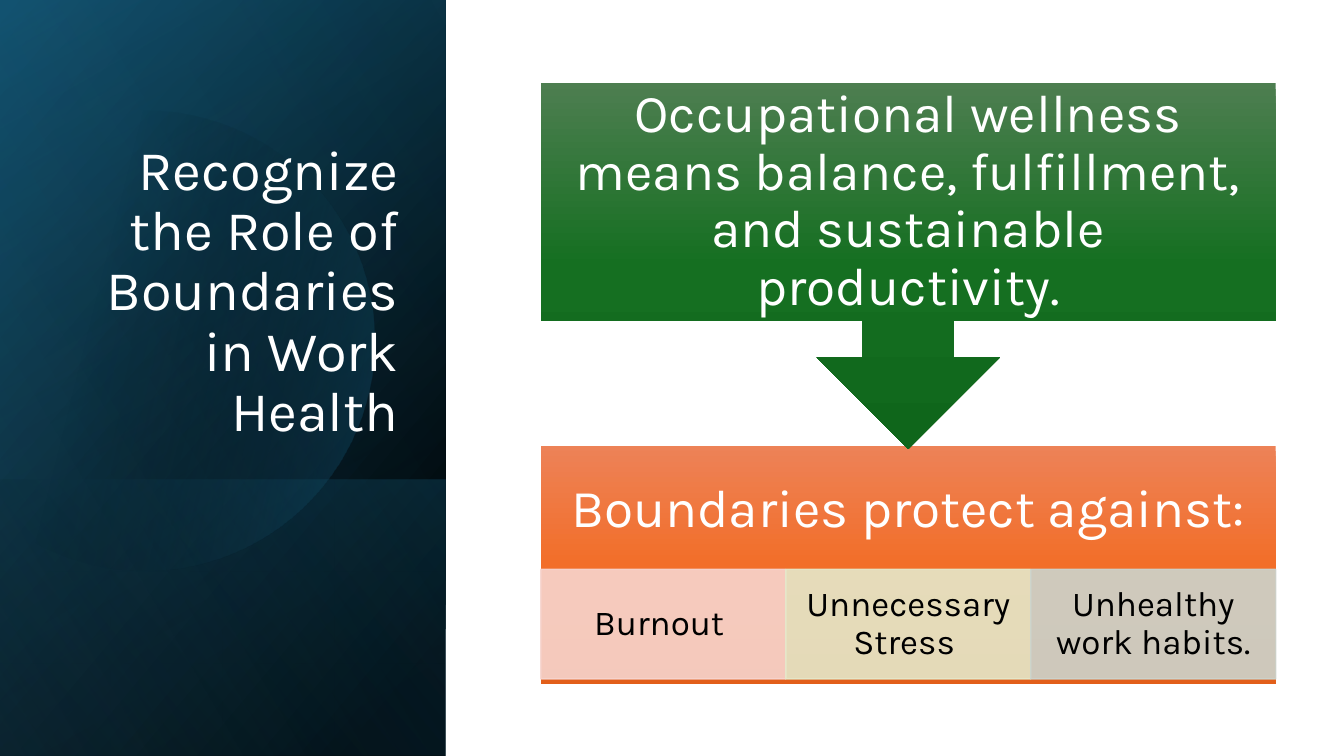
"""Build a slide on the role of boundaries in work health."""
from dataclasses import dataclass
from math import acos, cos, sin
from lxml.etree import SubElement as Sub
from pptx import Presentation as Deck
from pptx.dml.color import RGBColor as Rgb
from pptx.enum.shapes import MSO_SHAPE as Kind
from pptx.enum.text import MSO_ANCHOR as Anchor, PP_ALIGN as Align
from pptx.oxml.ns import qn
from pptx.shapes.autoshape import Shape
from pptx.util import Cm, Pt

INK = {
    "black": "000000", "white": "FFFFFF", "navy": "104862", "teal": "156082",
    "sky": "46B1E1", "moss": "4D7E50", "green": "156F21", "pine": "0F661B",
    "peach": "ED8257", "orange": "F26E29", "rust": "E25F1A",
    "pink": "F7D5CE", "lime": "E5E8CA", "sage": "CCD4CD",
}
SIDE, HIGH = 11.23, 19.05
LEFT, WIDE = 13.63, 18.52
HEAD = 3.25


@dataclass
class Stop:
    at: int
    ink: str
    alpha: int = 100


@dataclass
class Glow:
    angle: int
    stops: list[Stop]


@dataclass
class Box:
    left: float
    top: float
    width: float
    height: float


@dataclass
class Cell:
    text: str
    ink: str


SHEET = Box(0, 0, SIDE, HIGH)
BASE = (SHEET, Glow(220, [Stop(8, "black"), Stop(100, "navy")]))
HAZE = (SHEET, Glow(240, [Stop(0, "black", 0), Stop(99, "teal", 46)]))
FOOT = (Box(0, 12.09, SIDE, 6.96),
        Glow(140, [Stop(2, "teal", 29), Stop(100, "black", 30)]))
SHEEN = (SHEET, Glow(150, [Stop(0, "black", 0), Stop(99, "sky", 11)]))
DISC = Glow(14, [Stop(29, "black", 0), Stop(100, "teal", 43)])
GREEN = Glow(90, [Stop(0, "moss"), Stop(50, "green"), Stop(100, "pine")])
WARM = Glow(90, [Stop(0, "peach"), Stop(50, "orange"), Stop(100, "rust")])
CELLS = [Cell("Burnout ", "pink"), Cell("Unnecessary Stress ", "lime"),
         Cell("Unhealthy work habits.", "sage")]

deck = Deck()
deck.slide_width, deck.slide_height = Cm(33.87), Cm(HIGH)
slide = deck.slides.add_slide(deck.slide_layouts[6])
parts = slide.shapes


def frame(box: Box) -> list[Cm]:
    """Turn a box into lengths."""
    return [Cm(n) for n in (box.left, box.top, box.width, box.height)]


def shade(shape: Shape, glow: Glow) -> Shape:
    """Fill a shape with a linear blend and no outline."""
    shape.shadow.inherit = False
    shape.line.fill.background()
    shape.fill.gradient()
    grad = shape.element.spPr.find(qn("a:gradFill"))
    grad.clear()
    grad.set("rotWithShape", "1")
    row = Sub(grad, qn("a:gsLst"))
    for stop in glow.stops:
        mark = Sub(row, qn("a:gs"), pos=str(stop.at * 1000))
        tint = Sub(mark, qn("a:srgbClr"), val=INK[stop.ink])
        Sub(tint, qn("a:alpha"), val=str(stop.alpha * 1000))
    Sub(grad, qn("a:lin"), ang=str(glow.angle * 60000), scaled="0")
    return shape


def block(box: Box, glow: Glow, kind: Kind = Kind.RECTANGLE) -> Shape:
    """Add a preset shape with a blend."""
    return shade(parts.add_shape(kind, *frame(box)), glow)


def write(shape: Shape, text: str, *, size: float, ink: str = "white",
          align: Align = Align.CENTER, anchor: Anchor = Anchor.MIDDLE,
          pad: tuple[float, ...] = (0.76, 0.76, 0.76, 0.76)) -> None:
    """Set the text of a shape; pad is left, top, right, bottom."""
    body = shape.text_frame
    body.word_wrap, body.vertical_anchor = True, anchor
    (body.margin_left, body.margin_top,
     body.margin_right, body.margin_bottom) = map(Cm, pad)
    line = body.paragraphs[0]
    line.alignment, line.line_spacing = align, 0.9
    run = line.add_run()
    run.text = text
    run.font.name, run.font.size = "Karla", Pt(size)
    run.font.color.rgb = Rgb.from_string(INK[ink])


def disc(x: float, y: float, radius: float) -> Shape:
    """Add a disc cut off at the left edge of the slide."""
    reach, steps = acos(-x / radius), 120
    turns = [reach * (2 * n / steps - 1) for n in range(steps + 1)]
    dots = [(Cm(x + radius * cos(t)), Cm(y + radius * sin(t))) for t in turns]
    pen = parts.build_freeform(*dots[0])
    pen.add_line_segments(dots[1:], close=True)
    return shade(pen.convert_to_shape(), DISC)


def card(cell: Cell, box: Box) -> None:
    """Add a tinted cell with its label."""
    shape = parts.add_shape(Kind.RECTANGLE, *frame(box))
    shape.shadow.inherit = False
    shape.line.width = Pt(1)
    shape.fill.solid()
    shape.line.fill.solid()
    for fill in (shape.fill, shape.line.fill):
        fill.fore_color.rgb = Rgb.from_string(INK[cell.ink])
    for tint in shape.element.spPr.iter(qn("a:srgbClr")):
        Sub(tint, qn("a:alpha"), val="90000")
    write(shape, cell.text, size=25, ink="black", pad=(0.48, 0.08, 0.48, 0.08))


def main() -> None:
    """Draw the slide and save it."""
    for box, glow in (BASE, HAZE, FOOT):
        block(box, glow)
    disc(3.66, 8.59, 5.79)
    block(*SHEEN)
    title = parts.add_textbox(*frame(Box(1.63, 4.67, 8.66, 6.65)))
    write(title, "Recognize the Role of Boundaries in Work Health", size=40,
          align=Align.RIGHT, anchor=Anchor.BOTTOM,
          pad=(0.25, 0.13, 0.25, 0.13))

    panel = Box(LEFT, 11.24, WIDE, 6)
    write(block(panel, WARM), "Boundaries protect against:", size=38,
          pad=(0.76, 0.76, 0.76, 0.76 + panel.height - HEAD))
    step = WIDE / len(CELLS)
    for n, cell in enumerate(CELLS):
        card(cell, Box(LEFT + n * step, 14.35, step, 2.76))
    call = block(Box(LEFT, 2.09, WIDE, 9.22), GREEN, Kind.DOWN_ARROW_CALLOUT)
    write(call, "Occupational wellness means balance, fulfillment, "
          "and sustainable productivity.", size=38)
    deck.save("out.pptx")


if __name__ == "__main__":
    main()
